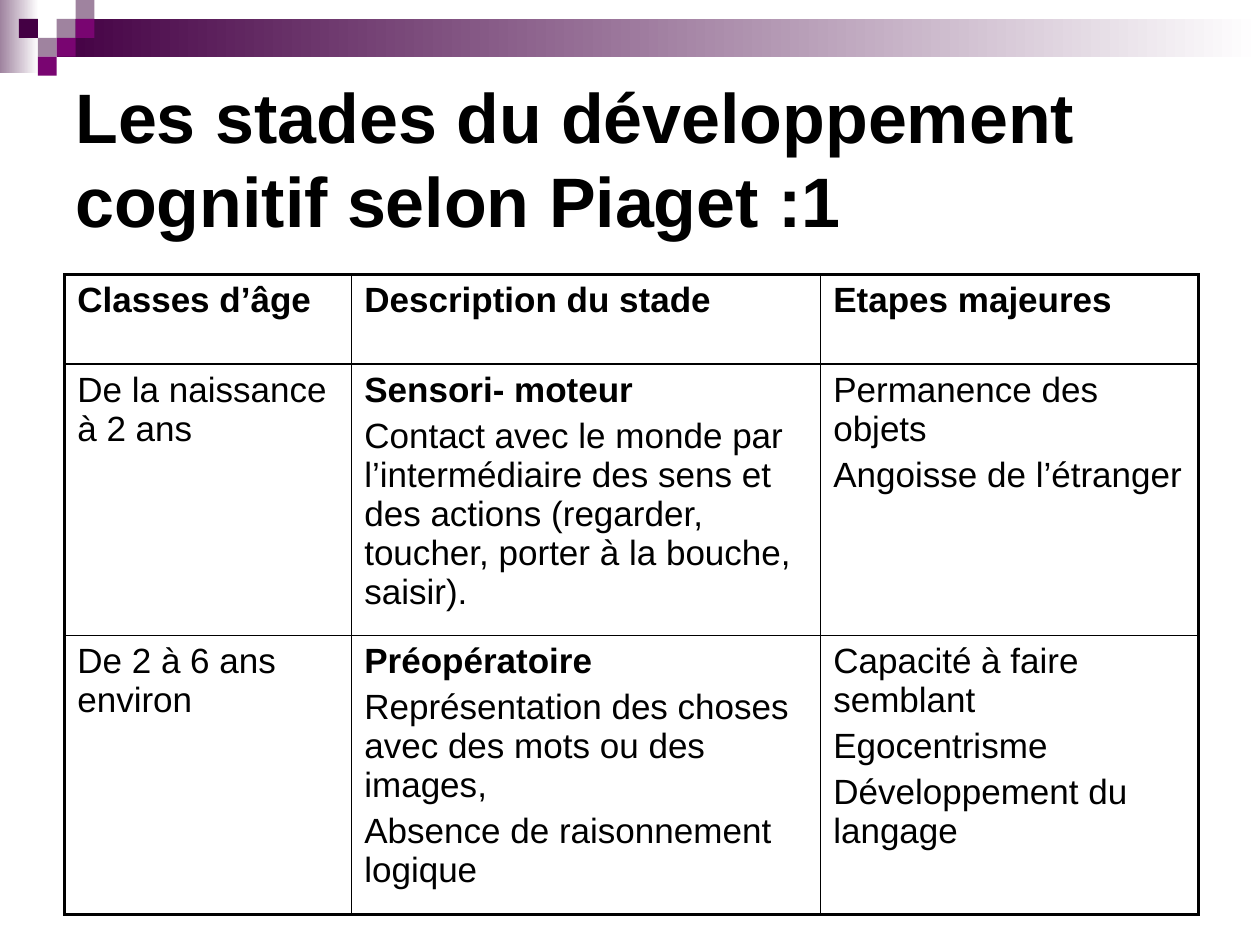
from dataclasses import dataclass

from lxml.etree import SubElement
from pptx import Presentation
from pptx.dml.color import RGBColor
from pptx.enum.shapes import MSO_SHAPE
from pptx.enum.text import MSO_ANCHOR
from pptx.oxml.ns import qn
from pptx.util import Pt


@dataclass(frozen=True)
class Theme:
    font: str = "Arial"
    text: str = "000000"
    white: str = "FFFFFF"
    dark: str = "440044"
    vivid: str = "790571"
    pale: str = "9F839F"
    title_size: float = 40
    body_size: float = 20
    outer_line: float = 2.25
    inner_line: float = 1


THEME = Theme()

# Each cell holds a list of (text, bold) paragraphs
ROWS = [
    [[("Classes d’âge", True)],
     [("Description du stade", True)],
     [("Etapes majeures", True)]],
    [[("De la naissance à 2 ans", False)],
     [("Sensori- moteur", True),
      ("Contact avec le monde par l’intermédiaire des sens et des actions "
       "(regarder, toucher, porter à la bouche, saisir).", False)],
     [("Permanence des objets", False), ("Angoisse de l’étranger", False)]],
    [[("De 2 à 6 ans environ", False)],
     [("Préopératoire", True),
      ("Représentation des choses avec des mots ou des images,", False),
      ("Absence de raisonnement logique", False)],
     [("Capacité à faire semblant", False), ("Egocentrisme", False),
      ("Développement du langage", False)]],
]
COL_WIDTHS = [164, 268, 216]
ROW_HEIGHTS = [51, 145, 149]


def write(p, text, size=THEME.body_size, bold=False, before=0):
    p.space_before = Pt(before)
    r = p.add_run()
    r.text = text
    r.font.name = THEME.font
    r.font.size = Pt(size)
    r.font.bold = bold
    r.font.color.rgb = RGBColor.from_string(THEME.text)


def add_rect(s, x, y, w, h, *colors):
    """Draw a plain rectangle: one colour is solid, two make a gradient."""
    sp = s.shapes.add_shape(MSO_SHAPE.RECTANGLE, Pt(x), Pt(y), Pt(w), Pt(h))
    sp.shadow.inherit = False
    sp.line.fill.background()
    if len(colors) == 1:
        sp.fill.solid()
        sp.fill.fore_color.rgb = RGBColor.from_string(colors[0])
    else:
        sp.fill.gradient()
        sp.fill.gradient_angle = 0
        for stop, color in zip(sp.fill.gradient_stops, colors):
            stop.color.rgb = RGBColor.from_string(color)


def add_banner(s, x, y, w, unit):
    # Gradient bands
    add_rect(s, x, y, 22, 42, THEME.pale, THEME.white)
    add_rect(s, x + 3 * unit, y + unit, w - 3 * unit, 2 * unit,
             THEME.dark, THEME.white)
    # Mosaic of squares, by column and row
    squares = [(3, 1, THEME.pale), (4, 0, THEME.pale), (4, 1, THEME.vivid),
               (2, 2, THEME.pale), (1, 1, THEME.dark), (3, 2, THEME.vivid),
               (2, 3, THEME.vivid)]
    for col, row, color in squares:
        add_rect(s, x + col * unit, y + row * unit, unit, unit, color)


def add_title(s, x, y, w, h, text):
    tf = s.shapes.add_textbox(Pt(x), Pt(y), Pt(w), Pt(h)).text_frame
    tf.word_wrap = True
    tf.vertical_anchor = MSO_ANCHOR.MIDDLE
    write(tf.paragraphs[0], text, size=THEME.title_size, bold=True)


def set_borders(cell, widths):
    tcPr = cell._tc.get_or_add_tcPr()
    for i, (side, width) in enumerate(widths.items()):
        ln = tcPr.makeelement(qn(f"a:ln{side}"), {"w": str(Pt(width))})
        fill = SubElement(ln, qn("a:solidFill"))
        SubElement(fill, qn("a:srgbClr"), val=THEME.text)
        tcPr.insert(i, ln)  # borders come before the cell fill


def add_stage_table(s, x, y, w, h):
    n_rows, n_cols = len(ROWS), len(COL_WIDTHS)
    table = s.shapes.add_table(n_rows, n_cols, Pt(x), Pt(y), Pt(w), Pt(h)).table
    table.first_row = table.horz_banding = False
    for column, width in zip(table.columns, COL_WIDTHS):
        column.width = Pt(width)
    for row, height in zip(table.rows, ROW_HEIGHTS):
        row.height = Pt(height)

    for i, row in enumerate(ROWS):
        for j, paragraphs in enumerate(row):
            cell = table.cell(i, j)
            cell.fill.background()
            on_edge = {"L": j == 0, "R": j == n_cols - 1,
                       "T": i == 0, "B": i == n_rows - 1}
            set_borders(cell, {side: THEME.outer_line if edge else THEME.inner_line
                               for side, edge in on_edge.items()})
            tf = cell.text_frame
            for k, (text, bold) in enumerate(paragraphs):
                p = tf.add_paragraph() if k else tf.paragraphs[0]
                write(p, text, bold=bold, before=4)


def main():
    prs = Presentation()
    prs.slide_width, prs.slide_height = Pt(720), Pt(540)
    s = prs.slides.add_slide(prs.slide_layouts[6])
    add_banner(s, 0, 0, 720, 10.8)
    add_title(s, 36, 36, 648, 108,
              "Les stades du développement cognitif selon Piaget :1")
    add_stage_table(s, 37, 157, sum(COL_WIDTHS), sum(ROW_HEIGHTS))
    prs.save("out.pptx")


if __name__ == "__main__":
    main()
